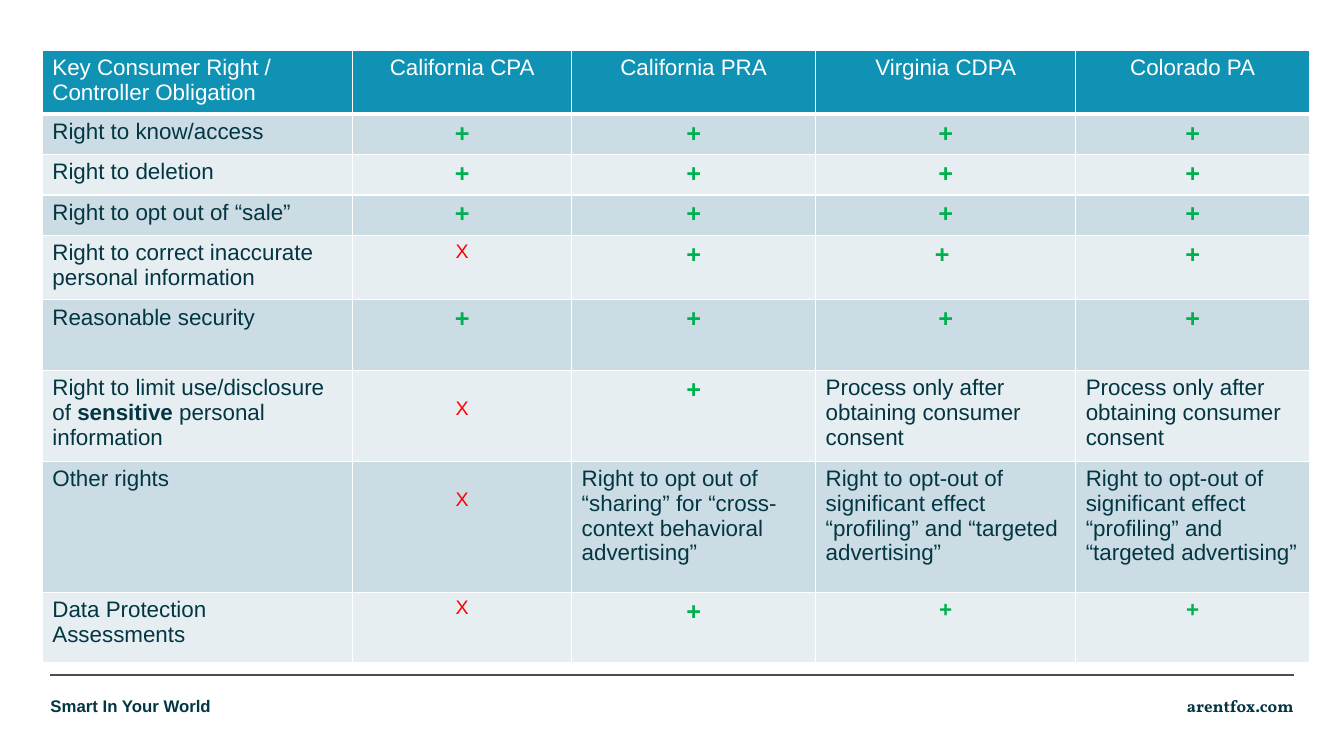
"""Build a slide comparing consumer rights under four state privacy acts."""
from lxml.etree import SubElement
from pptx import Presentation
from pptx.dml.color import RGBColor
from pptx.enum.shapes import MSO_CONNECTOR
from pptx.enum.text import PP_ALIGN
from pptx.oxml import parse_xml
from pptx.oxml.ns import nsdecls, qn
from pptx.util import Inches, Pt

WHITE = RGBColor(0xFF, 0xFF, 0xFF)
NAVY = RGBColor(0x03, 0x36, 0x43)
TEAL = RGBColor(0x10, 0x92, 0xB4)
BAND_DARK = RGBColor(0xCC, 0xDC, 0xE5)
BAND_LIGHT = RGBColor(0xE7, 0xEE, 0xF2)
GREEN = RGBColor(0x00, 0xB0, 0x50)
RED = RGBColor(0xFF, 0x00, 0x00)
GRAY = RGBColor(0x4D, 0x4D, 0x4F)

CONSENT = "Process only after obtaining consumer consent"
PROFILING = "Right to opt-out of significant effect “profiling” and “targeted advertising”"
SHARING = "Right to opt out of “sharing” for “cross-context behavioral advertising”"
ROWS = [
    ("Key Consumer Right / Controller Obligation",
     "California CPA", "California PRA", "Virginia CDPA", "Colorado PA"),
    ("Right to know/access", "+", "+", "+", "+"),
    ("Right to deletion", "+", "+", "+", "+"),
    ("Right to opt out of “sale”", "+", "+", "+", "+"),
    ("Right to correct inaccurate personal information", "X", "+", "+ ", "+"),
    ("Reasonable security", "+", "+", "+", "+"),
    ("Right to limit use/disclosure of sensitive personal information",
     "X", "+", CONSENT, CONSENT),
    ("Other rights", "X", SHARING, PROFILING, PROFILING),
    ("Data Protection Assessments", "X", "+", "+", "+"),
]
COLUMN_WIDTHS = (3.08, 2.17, 2.42, 2.58, 2.32)
ROW_HEIGHTS = (0.62, 0.4, 0.4, 0.4, 0.64, 0.7, 0.9, 1.3, 0.7)
EMPHASIS = "sensitive"
LOWERED_CROSSES = {(6, 1), (7, 1)}
SMALL_PLUSES = {(8, 3), (8, 4)}
MARKS = {"+": (18, GREEN, True), "X": (14, RED, False)}
FOOTERS = [
    ("Smart In Your World", "Arial", 0, 3.42, PP_ALIGN.LEFT),
    ("arentfox.com", "Vollkorn", 10.17, 3.16, PP_ALIGN.RIGHT),
]


def style_font(font, name, size, color, bold):
    font.name = name
    font.size = Pt(size)
    font.color.rgb = color
    font.bold = bold


def add_borders(cell, header):
    properties = cell._tc.get_or_add_tcPr()
    for index, side in enumerate(("lnL", "lnR", "lnT", "lnB")):
        width = Pt(3 if header and side == "lnB" else 1)
        properties.insert(index, parse_xml(
            f'<a:{side} {nsdecls("a")} w="{width}"><a:solidFill>'
            f'<a:srgbClr val="{WHITE}"/></a:solidFill></a:{side}>'))


def fill_cell(cell, text, row, column):
    header = row == 0
    mark = text.strip()
    size, color, bold = MARKS.get(mark, (16, WHITE if header else NAVY, False))
    if (row, column) in SMALL_PLUSES:
        size = 16
    paragraph = cell.text_frame.paragraphs[0]
    before, emphasis, after = text.partition(EMPHASIS)
    for part in filter(None, (before, emphasis, after)):
        run = paragraph.add_run()
        run.text = part
        style_font(run.font, "Arial", size, color, bold or part == EMPHASIS)
    if mark in MARKS or (header and column > 0):
        paragraph.alignment = PP_ALIGN.CENTER
    if (row, column) in LOWERED_CROSSES:
        cell.margin_top = Inches(0.27)
    cell.fill.solid()
    cell.fill.fore_color.rgb = TEAL if header else (BAND_LIGHT, BAND_DARK)[row % 2]
    add_borders(cell, header)


def add_rights_table(slide):
    table = slide.shapes.add_table(
        len(ROWS), len(COLUMN_WIDTHS), Inches(0.42), Inches(0.5),
        Inches(sum(COLUMN_WIDTHS)), Inches(sum(ROW_HEIGHTS))).table
    table.horz_banding = False
    for column, width in zip(table.columns, COLUMN_WIDTHS):
        column.width = Inches(width)
    for row, height in zip(table.rows, ROW_HEIGHTS):
        row.height = Inches(height)
    for row, texts in enumerate(ROWS):
        for column, text in enumerate(texts):
            fill_cell(table.cell(row, column), text, row, column)


def add_footer(slide):
    rule = slide.shapes.add_connector(
        MSO_CONNECTOR.STRAIGHT, Inches(0.5), Inches(6.7), Inches(12.83), Inches(6.7))
    rule.line.color.rgb = GRAY
    rule.line.width = Pt(1.25)
    SubElement(rule._element.spPr, qn("a:effectLst"))
    for text, font_name, left, width, alignment in FOOTERS:
        box = slide.shapes.add_textbox(
            Inches(left), Inches(6.9), Inches(width), Inches(0.2))
        frame = box.text_frame
        frame.word_wrap = True
        frame.margin_top = frame.margin_bottom = 0
        frame.margin_left = frame.margin_right = Inches(0.5)
        frame.text = text
        paragraph = frame.paragraphs[0]
        paragraph.alignment = alignment
        style_font(paragraph.runs[0].font, font_name, 12, NAVY, True)


def main():
    presentation = Presentation()
    presentation.slide_width = Inches(13.33)
    presentation.slide_height = Inches(7.5)
    slide = presentation.slides.add_slide(presentation.slide_layouts[6])
    add_footer(slide)
    add_rights_table(slide)
    presentation.save("out.pptx")


if __name__ == "__main__":
    main()
